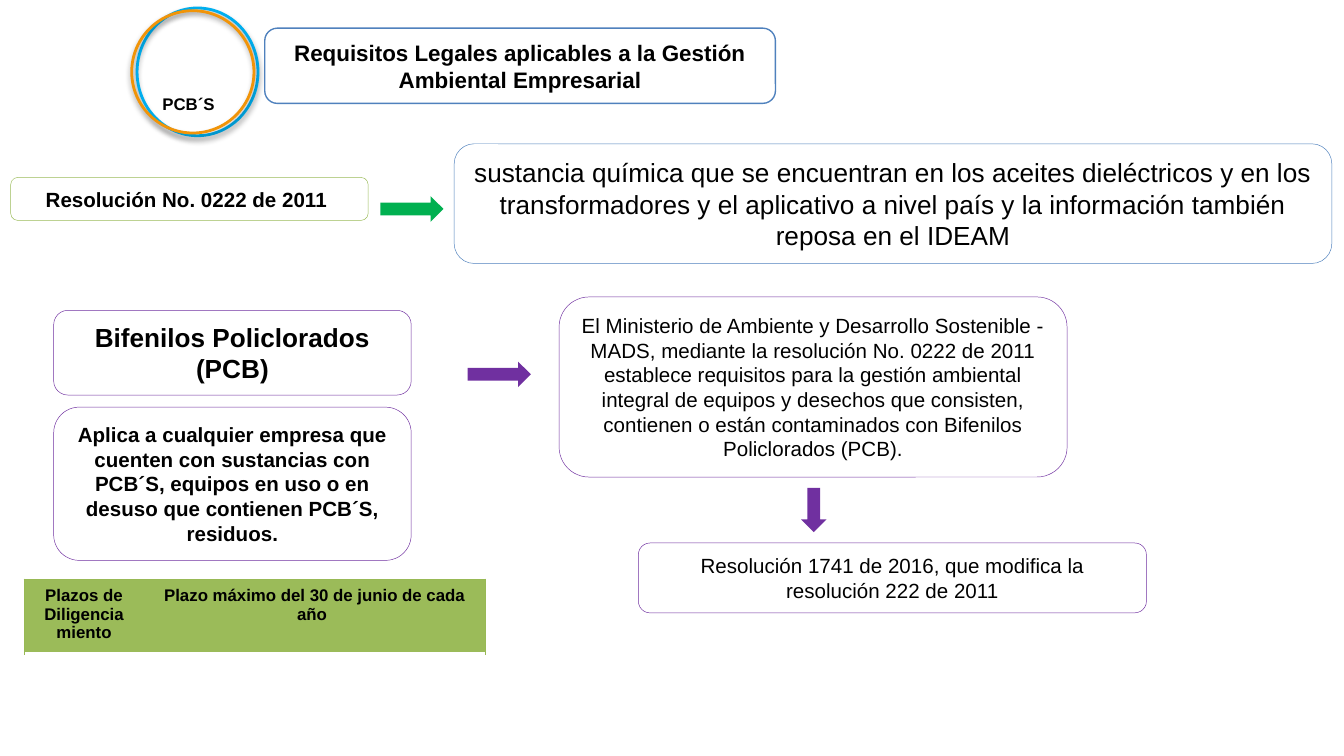
from lxml import etree
from pptx import Presentation
from pptx.dml.color import RGBColor
from pptx.enum.shapes import MSO_SHAPE as Shape
from pptx.enum.text import MSO_ANCHOR as Anchor, PP_ALIGN as Align
from pptx.oxml import parse_xml
from pptx.oxml.ns import nsdecls, qn
from pptx.util import Inches, Pt

BLACK = RGBColor(0x00, 0x00, 0x00)
WHITE = RGBColor(0xFF, 0xFF, 0xFF)
CYAN = RGBColor(0x00, 0xB0, 0xF0)
ORANGE = RGBColor(0xF1, 0x94, 0x08)
BLUE = RGBColor(0x4F, 0x81, 0xBD)
OLIVE = RGBColor(0x9B, 0xBB, 0x59)
OLIVE_EDGE = RGBColor(0x98, 0xB9, 0x55)
GREEN = RGBColor(0x00, 0xB0, 0x50)
PURPLE = RGBColor(0x70, 0x30, 0xA0)


def write(frame, text, size, bold=False, align=Align.CENTER):
    frame.word_wrap = True
    paragraph = frame.paragraphs[0]
    paragraph.text = text
    paragraph.alignment = align
    font = paragraph.font
    font.name, font.size, font.bold = "Arial", Pt(size), bold
    font.color.rgb = BLACK


def add_ring(shapes, left, top, width, height, color):
    ring = shapes.add_shape(Shape.OVAL, *map(Inches, (left, top, width, height)))
    ring.fill.background()
    ring.line.color.rgb = color
    ring.line.width = Pt(1.5)
    ring._element.spPr.append(parse_xml(
        f'<a:effectLst {nsdecls("a")}>'
        f'<a:outerShdw blurRad="{Pt(3.1)}" dist="{Pt(1.8)}" dir="5400000" rotWithShape="0">'
        '<a:srgbClr val="000000"><a:alpha val="35000"/></a:srgbClr>'
        '</a:outerShdw></a:effectLst>'))


def add_badge(slide):
    badge = slide.shapes.add_group_shape()
    add_ring(badge.shapes, 1.02, 0.06, 0.9, 0.95, CYAN)
    add_ring(badge.shapes, 0.98, 0.08, 0.91, 0.91, ORANGE)
    label = badge.shapes.add_textbox(Inches(1.11), Inches(0.65), Inches(0.71), Inches(0.25))
    write(label.text_frame, "PCB´S", 9, True, Align.LEFT)


def add_box(slide, left, top, width, height, text, size, edge,
            bold=False, filled=True, edge_width=0.25):
    box = slide.shapes.add_shape(
        Shape.ROUNDED_RECTANGLE, *map(Inches, (left, top, width, height)))
    box.shadow.inherit = False
    if filled:
        box.fill.solid()
        box.fill.fore_color.rgb = WHITE
    else:
        box.fill.background()
    box.line.color.rgb = edge
    box.line.width = Pt(edge_width)
    box.text_frame.vertical_anchor = Anchor.MIDDLE
    write(box.text_frame, text, size, bold)


def add_arrow(slide, left, top, width, color, rotation=0):
    arrow = slide.shapes.add_shape(
        Shape.RIGHT_ARROW, *map(Inches, (left, top, width, 0.19)))
    arrow.shadow.inherit = False
    arrow.fill.solid()
    arrow.fill.fore_color.rgb = color
    arrow.line.fill.background()
    arrow.rotation = rotation


def set_borders(cell, borders):
    properties = cell._tc.get_or_add_tcPr()
    for position, (side, style) in enumerate(borders.items()):
        edge = etree.Element(qn(f"a:ln{side}"))
        if style:
            color, width = style
            edge.set("w", str(Pt(width)))
            fill = etree.SubElement(edge, qn("a:solidFill"))
            etree.SubElement(fill, qn("a:srgbClr"), val=str(color))
        else:
            etree.SubElement(edge, qn("a:noFill"))
        properties.insert(position, edge)


def add_deadline_table(slide):
    deadlines = slide.shapes.add_table(
        1, 2, Inches(0.18), Inches(4.31), Inches(3.42), Inches(0.55)).table
    thin, thick = (OLIVE_EDGE, 0.75), (WHITE, 2)
    columns = (
        (0.89, "Plazos de Diligenciamiento", thin, None),
        (2.54, "Plazo máximo del 30 de junio de cada año ", None, thin),
    )
    for column, cell, (width, text, left, right) in zip(
            deadlines.columns, deadlines.rows[0].cells, columns):
        column.width = Inches(width)
        cell.fill.solid()
        cell.fill.fore_color.rgb = OLIVE
        write(cell.text_frame, text, 9, True)
        set_borders(cell, {"L": left, "R": right, "T": thin, "B": thick})


def main():
    deck = Presentation()
    deck.slide_width = Inches(10)
    deck.slide_height = Inches(10) * 9 // 16
    slide = deck.slides.add_slide(deck.slide_layouts[6])

    add_badge(slide)
    add_box(slide, 1.97, 0.21, 3.8, 0.56,
            "Requisitos Legales aplicables a la Gestión Ambiental Empresarial",
            12, BLUE, bold=True, filled=False, edge_width=0.75)

    add_box(slide, 0.08, 1.32, 2.66, 0.32, "Resolución No. 0222 de 2011 ", 11, OLIVE, bold=True)
    add_box(slide, 3.38, 1.07, 6.53, 0.89,
            "sustancia química que se encuentran en los aceites dieléctricos y en los "
            "transformadores y el aplicativo a nivel país y la información también "
            "reposa en el IDEAM", 14, BLUE)
    add_arrow(slide, 2.83, 1.46, 0.47, GREEN)

    add_box(slide, 0.4, 2.31, 2.66, 0.63, "Bifenilos Policlorados (PCB)", 14, PURPLE, bold=True)
    add_arrow(slide, 3.48, 2.69, 0.47, PURPLE)
    add_box(slide, 4.16, 2.21, 3.78, 1.34,
            "El Ministerio de Ambiente y Desarrollo Sostenible - MADS, mediante la "
            "resolución No. 0222 de 2011 establece requisitos para la gestión ambiental "
            "integral de equipos y desechos que consisten, contienen o están contaminados "
            "con Bifenilos Policlorados (PCB).", 11, PURPLE)
    add_deadline_table(slide)
    add_box(slide, 0.4, 3.03, 2.66, 1.14,
            "Aplica a cualquier empresa que cuenten con sustancias con PCB´S, equipos "
            "en uso o en desuso que contienen PCB´S, residuos.", 11, PURPLE, bold=True)
    add_arrow(slide, 5.89, 3.7, 0.33, PURPLE, rotation=90)
    add_box(slide, 4.75, 4.04, 3.78, 0.52,
            "Resolución 1741 de 2016, que modifica la resolución 222 de 2011", 11, PURPLE)

    deck.save("out.pptx")


if __name__ == "__main__":
    main()
